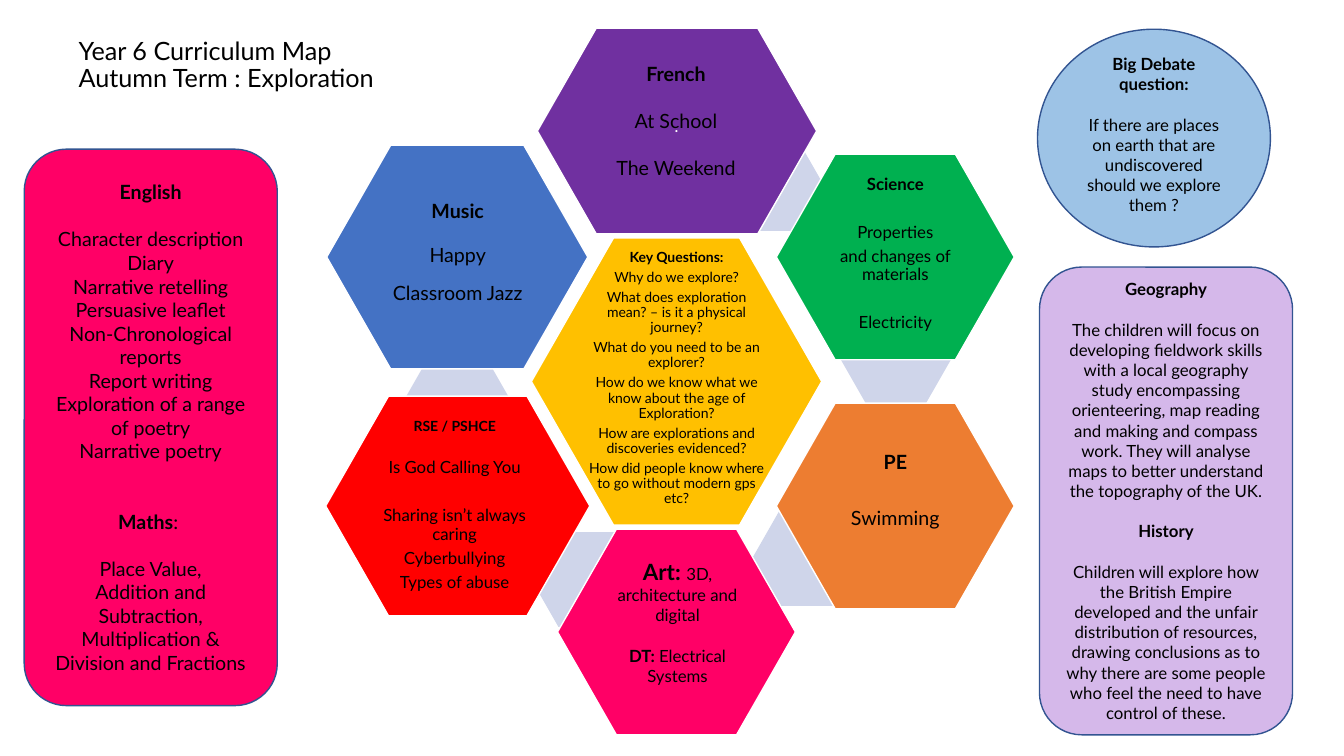
from dataclasses import dataclass
from typing import Optional

from pptx import Presentation
from pptx.dml.color import RGBColor
from pptx.enum.shapes import MSO_SHAPE
from pptx.enum.text import MSO_ANCHOR, MSO_AUTO_SIZE, PP_ALIGN
from pptx.util import Emu, Inches, Pt

FONT = "Lato"
COLORS = {
    "black": "000000", "white": "FFFFFF", "outline": "325491", "link": "CFD5EA",
    "gold": "FFC000", "purple": "7030A0", "green": "00B050", "orange": "ED7D31",
    "pink": "FF0066", "red": "FF0000", "blue": "4472C4", "sky": "9DC3E6", "lilac": "D5B8EA",
}
# Grid: square cells, 75 rows high
CELL = Inches(7.5) / 75


@dataclass(frozen=True)
class Area:
    col: float
    row: float
    cols: float
    rows: float

    def emu(self) -> list[Emu]:
        return [Emu(round(n * CELL)) for n in (self.col, self.row, self.cols, self.rows)]


@dataclass(frozen=True)
class Para:
    """A paragraph: a bold lead, then plain text; sizes and gap in points."""
    text: str = ""
    lead: str = ""
    size: float = 12
    before: float = 0
    lead_size: Optional[float] = None


@dataclass(frozen=True)
class Topic:
    color: str
    hexagon: Area
    label: Area
    paras: list[Para]
    lift: float = 0  # extra inset below the text, in rows
    inset: float = 0.2
    spacing: float = 0.9


@dataclass(frozen=True)
class Panel:
    color: str
    outline: MSO_SHAPE
    area: Area
    paras: list[Para]
    lift: float = 0


def plain(lines: list[str], size: float, before: float = 0) -> list[Para]:
    return [Para(line, size=size, before=before) for line in lines]


def add_run(paragraph, text: str, size: float, bold: bool = False, color: str = "black") -> None:
    run = paragraph.add_run()
    run.text = text
    run.font.name, run.font.size, run.font.bold = FONT, Pt(size), bold
    run.font.color.rgb = RGBColor.from_string(COLORS[color])


def write(frame, paras: list[Para], spacing: float = 1, lift: float = 0,
          inset: Optional[float] = None, color: str = "black") -> None:
    frame.word_wrap = True
    frame.auto_size = MSO_AUTO_SIZE.NONE
    frame.vertical_anchor = MSO_ANCHOR.MIDDLE
    if inset is not None:
        side = Emu(round(inset * CELL))
        frame.margin_left = frame.margin_right = side
        frame.margin_top = frame.margin_bottom = side
    frame.margin_bottom += round(lift * CELL)
    for index, para in enumerate(paras):
        paragraph = frame.paragraphs[0] if index == 0 else frame.add_paragraph()
        paragraph.alignment = PP_ALIGN.CENTER
        paragraph.line_spacing = spacing
        paragraph.space_before, paragraph.space_after = Pt(para.before), Pt(0)
        if para.lead:
            add_run(paragraph, para.lead, para.lead_size or para.size, True, color)
        if para.text:
            add_run(paragraph, para.text, para.size, False, color)


def add_outline(slide, kind: MSO_SHAPE, area: Area, fill: str, line: Optional[str] = None):
    shape = slide.shapes.add_shape(kind, *area.emu())
    shape.shadow.inherit = False
    shape.fill.solid()
    shape.fill.fore_color.rgb = RGBColor.from_string(COLORS[fill])
    if line:
        shape.line.color.rgb = RGBColor.from_string(COLORS[line])
        shape.line.width = Pt(1)
    else:
        shape.line.fill.background()
    if kind == MSO_SHAPE.HEXAGON:
        shape.adjustments[0] = 0.286
    return shape


def add_label(slide, area: Area, paras: list[Para], **style) -> None:
    write(slide.shapes.add_textbox(*area.emu()).text_frame, paras, **style)


LINKS = [(70.7, 13.5), (83.4, 31), (74.6, 50.7), (52.7, 52.8), (39.9, 35.3)]

TOPICS = [
    Topic("gold", Area(52.7, 23.6, 28.8, 28.5), Area(58, 28.8, 18.2, 18), [
        Para(lead="Key Questions:", size=10),
        *plain(["Why do we explore?",
                "What does exploration mean? – is it a physical journey?",
                "What do you need to be an explorer?",
                "How do we know what we know about the age of Exploration?",
                "How are explorations and discoveries evidenced?",
                "How did people know where to go without modern gps etc?"], 10, 3.5),
    ], lift=0.5, inset=0.1),
    Topic("purple", Area(53.3, 2.8, 27.7, 20.4), Area(58, 4.5, 18.1, 14.9), [
        Para(lead="French", size=14),
        *plain(["At School", "The Weekend"], 14, 16.8),
    ], inset=0.1, spacing=1),
    Topic("green", Area(77, 15.3, 23.6, 20.4), Area(80.9, 18.7, 15.8, 13.6), [
        Para(lead="Science"),
        Para("Properties", before=21.4),
        Para("and changes of materials", before=4.2),
        Para("Electricity", before=21.4),
    ], lift=0.6),
    Topic("orange", Area(77, 40, 23.6, 20.4), Area(80.9, 43.3, 15.8, 13.6), [
        Para(lead="PE", size=14),
        Para("Swimming", size=14, before=25),
    ], lift=2.7),
    Topic("pink", Area(55.3, 52.5, 23.6, 20.4), Area(59.3, 55.9, 15.8, 13.6), [
        Para("3D, architecture and digital", lead="Art: ", lead_size=16),
        Para("Electrical", lead="DT: ", before=14.4),
        Para("Systems"),
    ], lift=2, spacing=1),
    Topic("red", Area(32.3, 39.3, 26.2, 21.8), Area(36.4, 45, 17.4, 14.9), [
        Para(lead="RSE / PSHCE", size=10),
        Para("Is God Calling You", before=17.8),
        Para("Sharing isn’t always caring", before=21.4),
        *plain(["Cyberbullying", "Types of abuse"], 12, 4.2),
    ], lift=4.6, inset=0.1),
    Topic("blue", Area(32.4, 14.4, 25.9, 22.2), Area(36.7, 18, 17.4, 14.9), [
        Para(lead="Music", size=14),
        Para("Happy", size=14, before=16.3),
        Para("Classroom Jazz", size=14, before=12),
    ], lift=0.7),
]

PANELS = [
    Panel("pink", MSO_SHAPE.ROUNDED_RECTANGLE, Area(2.4, 14.8, 25.1, 55.2), [
        Para(lead="English", size=14),
        Para("Character description", size=14, before=16.8),
        *plain(["Diary", "Narrative retelling", "Persuasive leaflet",
                "Non-Chronological reports", "Report writing",
                "Exploration of a range of poetry", "Narrative poetry"], 14),
        Para(": ", lead="Maths", size=14, before=33.6),
        Para("Place Value,", size=14, before=16.8),
        Para("Addition and Subtraction, Multiplication & Division and Fractions", size=14),
    ]),
    Panel("sky", MSO_SHAPE.OVAL, Area(102.9, 2.9, 23.1, 21.6), [
        Para(lead="Big Debate question:"),
        Para("If there are places on earth that are undiscovered should we explore them ?",
             before=14.4),
    ], lift=0.7),
    Panel("lilac", MSO_SHAPE.ROUNDED_RECTANGLE, Area(103.1, 26.5, 25.1, 46.4), [
        Para(lead="Geography"),
        Para("The children will focus on developing fieldwork skills with a local geography "
             "study encompassing orienteering, map reading and making and compass work. They "
             "will analyse maps to better understand the topography of the UK.", before=14.4),
        Para(lead="History", before=14.4),
        Para("Children will explore how the British Empire developed and the unfair "
             "distribution of resources, drawing conclusions as to why there are some people "
             "who feel the need to have control of these.", before=14.4),
    ]),
]


def main() -> None:
    deck = Presentation()
    deck.slide_width, deck.slide_height = Inches(13.33), Inches(7.5)
    slide = deck.slides.add_slide(deck.slide_layouts[5])

    # Title
    title = slide.shapes.title
    title.left, title.top, title.width, title.height = Area(6.8, 2.9, 115, 7.2).emu()
    title.text_frame.auto_size = MSO_AUTO_SIZE.NONE
    title.text_frame.vertical_anchor = MSO_ANCHOR.MIDDLE
    heading = title.text_frame.paragraphs[0]
    heading.alignment, heading.line_spacing = PP_ALIGN.LEFT, 0.9
    add_run(heading, "Year 6 Curriculum Map", 18)
    heading.add_line_break()
    add_run(heading, "Autumn Term : Exploration", 18)

    # Links behind the hexagons
    for col, row in LINKS:
        add_outline(slide, MSO_SHAPE.HEXAGON, Area(col, row, 10.9, 9.4), "link")

    # Subject hexagons and their labels
    for topic in TOPICS:
        add_outline(slide, MSO_SHAPE.HEXAGON, topic.hexagon, topic.color, "white")
        add_label(slide, topic.label, topic.paras, spacing=topic.spacing,
                  lift=topic.lift, inset=topic.inset)
    add_label(slide, Area(57.5, 5.9, 19.2, 14.1), [Para(lead=".", size=10)],
              spacing=0.9, lift=0.5, inset=0.1, color="white")

    # Side panels
    for panel in PANELS:
        shape = add_outline(slide, panel.outline, panel.area, panel.color, "outline")
        write(shape.text_frame, panel.paras, lift=panel.lift)

    deck.save("out.pptx")


if __name__ == "__main__":
    main()
